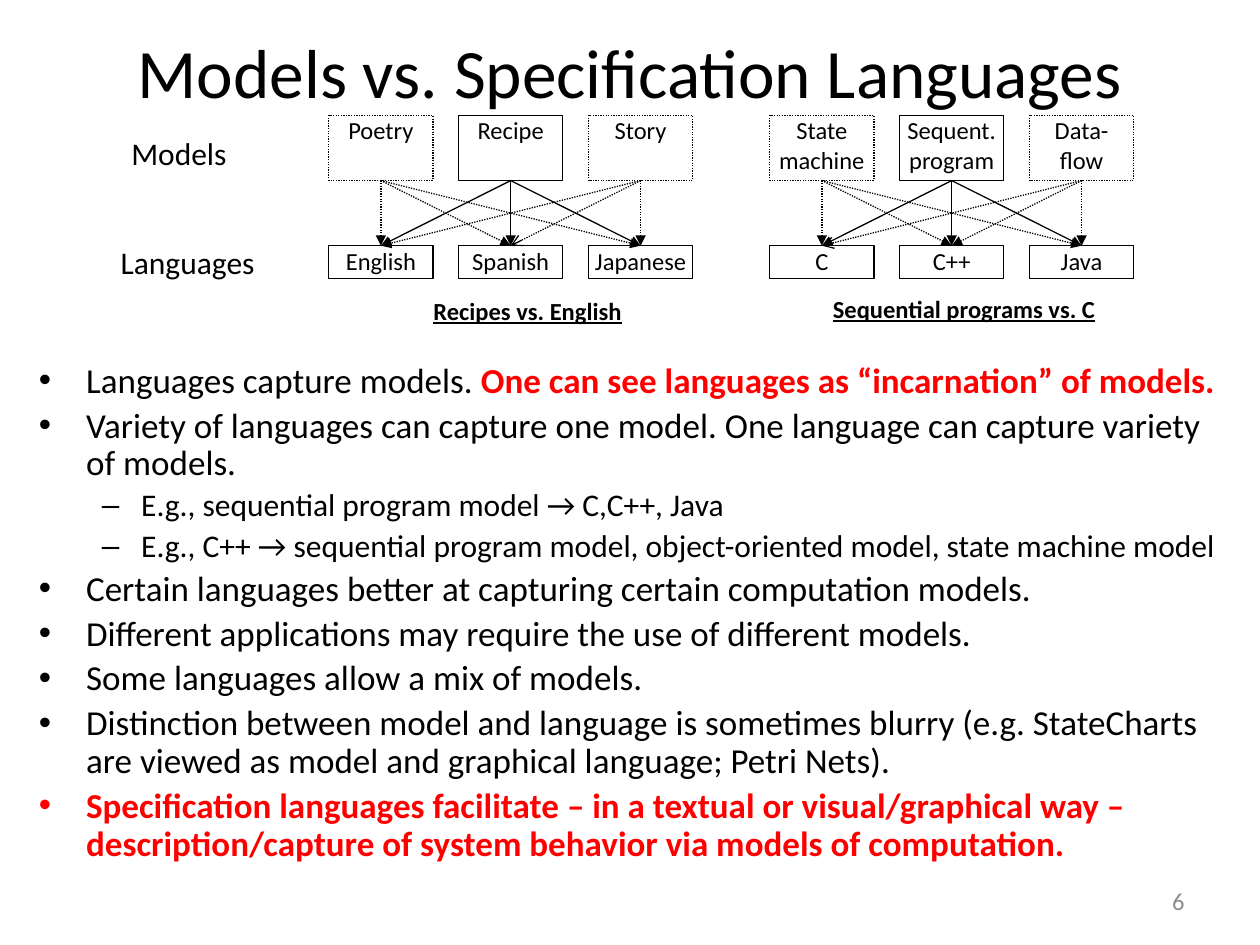
from lxml import etree
from pptx import Presentation
from pptx.dml.color import RGBColor
from pptx.enum.dml import MSO_LINE
from pptx.enum.shapes import MSO_CONNECTOR, MSO_SHAPE
from pptx.enum.text import MSO_ANCHOR, MSO_AUTO_SIZE, PP_ALIGN
from pptx.oxml.ns import qn
from pptx.util import Pt

RECT = MSO_SHAPE.RECTANGLE
LINE = MSO_CONNECTOR.STRAIGHT
DOT = MSO_LINE.ROUND_DOT
LEFT, MID, RIGHT = PP_ALIGN.LEFT, PP_ALIGN.CENTER, PP_ALIGN.RIGHT
TOP, CENTER = MSO_ANCHOR.TOP, MSO_ANCHOR.MIDDLE
NOFIT = MSO_AUTO_SIZE.NONE

BLACK, WHITE, RED, GREY = "000000", "FFFFFF", "FF0000", "8C8C8C"

# Grid of the diagrams, in points
STEP, WIDE = 74.2, 59.5
MODEL_Y, MODEL_H = 66, 37.2
LANG_Y, LANG_H = 140.4, 18.7


def color(code):
    return RGBColor.from_string(code)


def write(par, text, size=14, ink=BLACK, bold=False, under=False, align=None):
    """Add one run to a paragraph."""
    run = par.add_run()
    run.text = text
    font = run.font
    font.name, font.size, font.bold = "Calibri", Pt(size), bold
    font.underline = under
    font.color.rgb = color(ink)
    if align is not None:
        par.alignment = align


def place(shape, x, y, w, h):
    shape.left, shape.top, shape.width, shape.height = Pt(x), Pt(y), Pt(w), Pt(h)


class Deck:
    def __init__(self):
        self.file = Presentation()
        self.file.slide_width, self.file.slide_height = Pt(720), Pt(540)
        self.slide = self.file.slides.add_slide(self.file.slide_layouts[1])
        self.shapes = self.slide.shapes
        self.edge = 0.75

    def title(self, text, *area):
        shape = self.shapes.title
        place(shape, *area)
        frame = shape.text_frame
        frame.auto_size, frame.vertical_anchor = NOFIT, CENTER
        write(frame.paragraphs[0], text, size=39.6, align=MID)

    def body(self, items, *area):
        shape = self.slide.placeholders[1]
        place(shape, *area)
        frame = shape.text_frame
        frame.auto_size = NOFIT
        for i, (level, plain, strong) in enumerate(items):
            par = frame.add_paragraph() if i else frame.paragraphs[0]
            par.level, par.line_spacing = level, 0.9
            size = 18 if level else 20
            if plain:
                write(par, plain, size=size)
            if strong:
                write(par, strong, size=size, ink=RED, bold=True)

    def number(self, text, *area):
        frame = self.shapes.add_textbox(*map(Pt, area)).text_frame
        frame.word_wrap, frame.vertical_anchor = True, CENTER
        write(frame.paragraphs[0], text, ink=GREY, align=RIGHT)

    def box(self, text, *area, line=False, dash=None, **style):
        shape = self.shapes.add_shape(RECT, *map(Pt, area))
        shape.shadow.inherit = False
        shape.fill.solid()
        shape.fill.fore_color.rgb = color(WHITE)
        if line:
            self.stroke(shape.line, dash)
        else:
            shape.line.fill.background()
        frame = shape.text_frame
        frame.word_wrap, frame.vertical_anchor = True, TOP
        frame.margin_left = frame.margin_right = 0
        frame.margin_top = frame.margin_bottom = 0
        for i, part in enumerate(text.split("\n")):
            par = frame.add_paragraph() if i else frame.paragraphs[0]
            write(par, part, **style)

    def stroke(self, line, dash):
        line.color.rgb = color(BLACK)
        line.width = Pt(self.edge)
        if dash is not None:
            line.dash_style = dash

    def arrow(self, x1, y1, x2, y2, dash=None, head="triangle"):
        link = self.shapes.add_connector(LINE, Pt(x1), Pt(y1), Pt(x2), Pt(y2))
        self.stroke(link.line, dash)
        etree.SubElement(link.line._ln, qn("a:tailEnd"), type=head)
        etree.SubElement(link._element.spPr, qn("a:effectLst"))

    def graph(self, left, models, langs, thin):
        """Link every model to every language; the middle model is solid."""
        xs = [left + i * STEP for i in range(3)]
        mids = [x + WIDE / 2 for x in xs]
        for x, name in zip(xs, langs):
            self.box(name, x, LANG_Y, WIDE, LANG_H, line=True, align=MID)
        for i in (1, 0, 2):
            dash = None if i == 1 else DOT
            self.box(models[i], xs[i], MODEL_Y, WIDE, MODEL_H,
                     line=True, dash=dash, align=MID)
            for j, end in enumerate(mids):
                head = "arrow" if (i, j) == thin else "triangle"
                self.arrow(mids[i], MODEL_Y + MODEL_H, end, LANG_Y, dash, head)


def main():
    deck = Deck()
    deck.title("Models vs. Specification Languages", 36, 21.6, 648, 38.2)
    deck.number("6", 516, 500.5, 168, 28.8)

    # Bullets: level, plain part, red part
    deck.body([
        (0, "Languages capture models. ",
         "One can see languages as “incarnation” of models."),
        (0, "Variety of languages can capture one model. "
            "One language can capture variety of models.", ""),
        (1, "E.g., sequential program model → C,C++, Java", ""),
        (1, "E.g., C++ → sequential program model, object-oriented model, "
            "state machine model", ""),
        (0, "Certain languages better at capturing certain computation models.", ""),
        (0, "Different applications may require the use of different models.", ""),
        (0, "Some languages allow a mix of models.", ""),
        (0, "Distinction between model and language is sometimes blurry "
            "(e.g. StateCharts are viewed as model and graphical language; "
            "Petri Nets).", ""),
        (0, "", "Specification languages facilitate – in a textual or "
                "visual/graphical way – description/capture of system behavior "
                "via models of computation."),
    ], 15, 203.8, 690, 318)

    # Row labels
    deck.box("Models", 75, 76.3, 71, 24, size=18, align=LEFT)
    deck.box("Languages", 69, 139, 97, 26, size=18, align=LEFT)

    # Diagrams
    deck.graph(187.9, ["Poetry", "Recipe", "Story"],
               ["English", "Spanish", "Japanese"], thin=(2, 1))
    deck.graph(439.9, ["State\nmachine", "Sequent.\nprogram", "Data-\nflow"],
               ["C", "C++", "Java"], thin=(2, 0))

    # Captions
    note = dict(bold=True, under=True, align=LEFT)
    deck.box("Recipes vs. English", 247.7, 169.2, 139, 28.8, **note)
    deck.box("Sequential programs vs. C", 475.9, 167.8, 162, 27.4, **note)

    deck.file.save("out.pptx")


if __name__ == "__main__":
    main()
